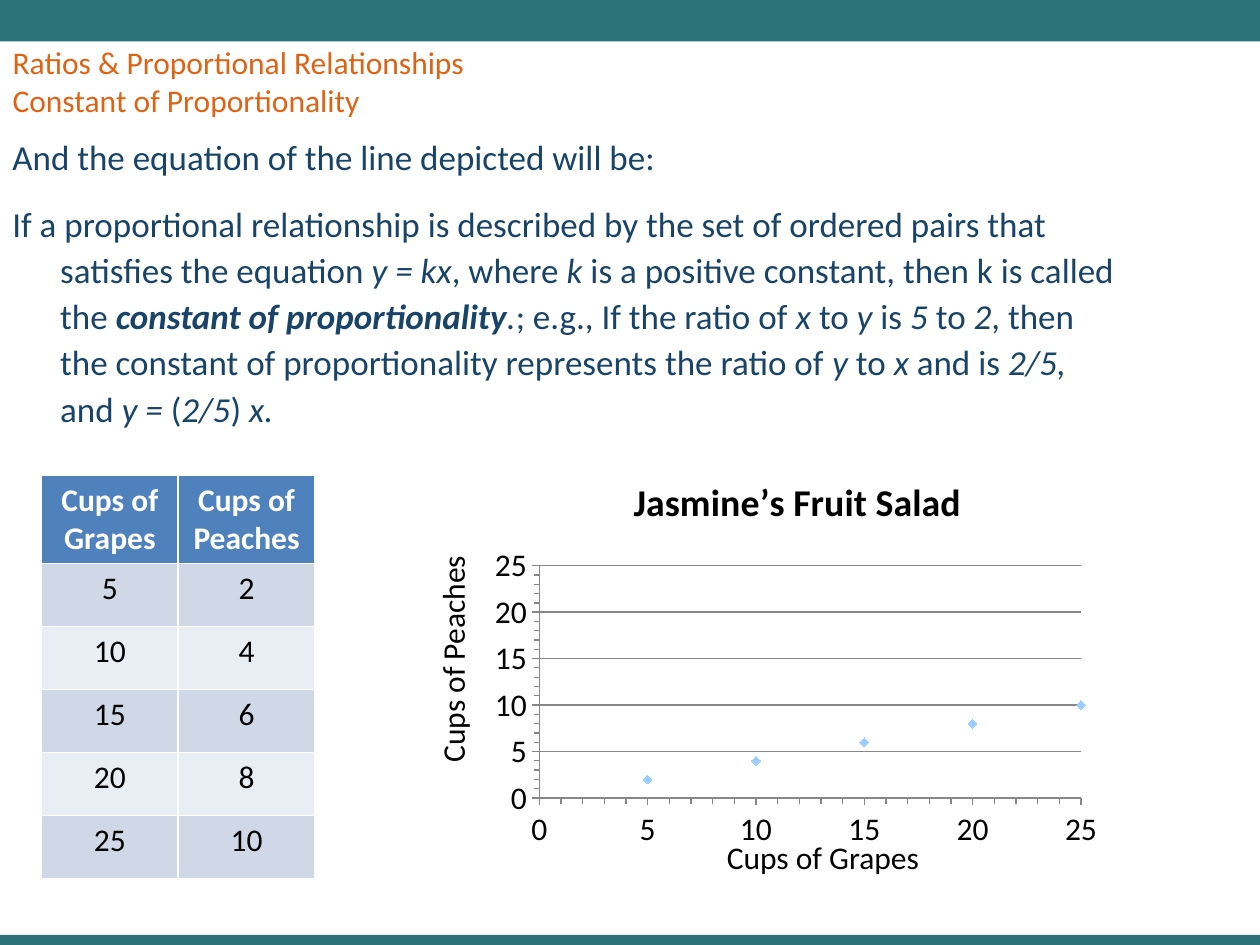
from pptx import Presentation
from pptx.chart.data import XyChartData
from pptx.dml.color import RGBColor
from pptx.enum.chart import XL_CHART_TYPE, XL_MARKER_STYLE, XL_TICK_MARK
from pptx.enum.shapes import MSO_SHAPE
from pptx.enum.text import MSO_ANCHOR, MSO_AUTO_SIZE, PP_ALIGN
from pptx.oxml import parse_xml
from pptx.oxml.ns import nsdecls
from pptx.util import Inches, Pt

RECTANGLE = MSO_SHAPE.RECTANGLE
LEFT, CENTER = PP_ALIGN.LEFT, PP_ALIGN.CENTER
TOP, BOTTOM = MSO_ANCHOR.TOP, MSO_ANCHOR.BOTTOM
NO_AUTOFIT = MSO_AUTO_SIZE.NONE
SCATTER = XL_CHART_TYPE.XY_SCATTER
DIAMOND = XL_MARKER_STYLE.DIAMOND
TICK_OUT = XL_TICK_MARK.OUTSIDE

FONT = "Calibri"
TEAL, ORANGE, NAVY = "2D7278", "DF6314", "194467"
BLACK, WHITE, GREY = "000000", "FFFFFF", "878787"
HEADER_BLUE, BAND_DARK, BAND_LIGHT = "4F81BD", "D0D8E8", "E9EDF4"
MARKER_BLUE = "99CCFF"

GRAPES = [5, 10, 15, 20, 25]
PEACHES = [2, 4, 6, 8, 10]
GRAPES_LABEL, PEACHES_LABEL = "Cups of Grapes", "Cups of Peaches"

# Asterisks enclose italics; the key term is bold as well
KEY_TERM = "constant of proportionality"
STATEMENTS = [
    "And the equation of the line depicted will be:",
    "If a proportional relationship is described by the set of ordered pairs "
    "that satisfies the equation *y = kx*, where *k* is a positive constant, "
    f"then k is called the *{KEY_TERM}**.*; e.g., If the ratio of *x *to *y *is "
    "*5 *to *2*, then the constant of proportionality represents the ratio of "
    "*y* to *x* and is *2/5, *and *y = *(*2/5*) *x.*",
]


def rgb(value):
    return RGBColor.from_string(value)


def style_font(font, size, color, bold=None):
    font.name = FONT
    font.size = Pt(size)
    font.color.rgb = rgb(color)
    font.bold = bold


def inches(box):
    return [Inches(length) for length in box]


def add_bar(slide, box):
    bar = slide.shapes.add_shape(RECTANGLE, *inches(box))
    bar.shadow.inherit = False
    bar.fill.solid()
    bar.fill.fore_color.rgb = rgb(TEAL)
    bar.line.fill.background()


def set_title(slide, box):
    title = slide.shapes.title
    title.left, title.top, title.width, title.height = inches(box)
    frame = title.text_frame
    frame.auto_size = NO_AUTOFIT
    frame.vertical_anchor = BOTTOM
    frame.text = "Ratios & Proportional Relationships\vConstant of Proportionality"
    paragraph = frame.paragraphs[0]
    paragraph.alignment = LEFT
    style_font(paragraph.font, 18, ORANGE)


def add_statements(slide, box):
    frame = slide.shapes.add_textbox(*inches(box)).text_frame
    frame.word_wrap = True
    for number, statement in enumerate(STATEMENTS):
        paragraph = frame.add_paragraph() if number else frame.paragraphs[0]
        paragraph.line_spacing = 1.1
        paragraph.space_after = Pt(12)
        # Hanging indent
        properties = paragraph._p.get_or_add_pPr()
        properties.set("marL", str(Inches(0.38)))
        properties.set("indent", str(-Inches(0.38)))
        style_font(paragraph.font, 20, NAVY)
        for position, piece in enumerate(statement.split("*")):
            if not piece:
                continue
            run = paragraph.add_run()
            run.text = piece
            if position % 2:
                run.font.italic = True
                run.font.bold = True if piece == KEY_TERM else None


def add_cups_table(slide, box):
    rows = [(GRAPES_LABEL, PEACHES_LABEL), *zip(GRAPES, PEACHES)]
    table = slide.shapes.add_table(len(rows), 2, *inches(box)).table
    for r, values in enumerate(rows):
        table.rows[r].height = Inches(0.5 if r else 0.69)
        band = BAND_DARK if r % 2 else BAND_LIGHT
        for c, value in enumerate(values):
            cell = table.cell(r, c)
            cell.fill.solid()
            cell.fill.fore_color.rgb = rgb(band if r else HEADER_BLUE)
            cell.vertical_anchor = TOP
            cell.text = str(value)
            paragraph = cell.text_frame.paragraphs[0]
            paragraph.alignment = CENTER
            style_font(paragraph.font, 18, BLACK if r else WHITE, bold=not r)


def style_axis(axis, gridlines):
    axis.minimum_scale, axis.maximum_scale = 0, 25
    axis.major_unit, axis.minor_unit = 5, 1
    axis.major_tick_mark = axis.minor_tick_mark = TICK_OUT
    axis.format.line.color.rgb = rgb(GREY)
    axis.has_major_gridlines = gridlines
    if gridlines:
        axis.major_gridlines.format.line.color.rgb = rgb(GREY)


def add_salad_chart(slide, box):
    data = XyChartData()
    series = data.add_series("Cups")
    for point in zip(GRAPES, PEACHES):
        series.add_data_point(*point)
    chart = slide.shapes.add_chart(SCATTER, *inches(box), data).chart
    style_font(chart.font, 18, BLACK)
    chart.has_legend = False
    chart.has_title = True
    chart.chart_title.text_frame.text = "Jasmine’s Fruit Salad"
    style_font(chart.chart_title.text_frame.paragraphs[0].font, 21.6, BLACK, True)
    style_axis(chart.category_axis, gridlines=False)
    style_axis(chart.value_axis, gridlines=True)

    # Markers only
    plot = chart.plots[0]
    plot.vary_by_categories = False
    salad = plot.series[0]
    salad.smooth = False
    salad.format.line.fill.background()
    salad.marker.style = DIAMOND
    salad.marker.size = 5
    salad.marker.format.fill.solid()
    salad.marker.format.fill.fore_color.rgb = rgb(MARKER_BLUE)
    salad.marker.format.line.fill.background()

    # Fixed plot area, as fractions of the chart
    area = {"x": 0.09, "y": 0.28, "w": 0.86, "h": 0.58}
    sizes = "".join(f'<c:{key} val="{value}"/>' for key, value in area.items())
    layout = parse_xml(
        f'<c:layout {nsdecls("c")}><c:manualLayout><c:layoutTarget val="inner"/>'
        f'<c:xMode val="edge"/><c:yMode val="edge"/>{sizes}'
        "</c:manualLayout></c:layout>")
    plot_area = chart._chartSpace.chart.plotArea
    for old in plot_area.findall(layout.tag):
        plot_area.remove(old)
    plot_area.insert(0, layout)


def add_axis_label(slide, box, label, vertical=False):
    frame = slide.shapes.add_textbox(*inches(box)).text_frame
    frame.word_wrap = True
    frame.text = label
    style_font(frame.paragraphs[0].font, 18, BLACK)
    if vertical:
        frame._txBody.bodyPr.set("vert", "vert270")


def main():
    presentation = Presentation()
    presentation.slide_width, presentation.slide_height = Inches(10), Inches(7.5)
    slide = presentation.slides.add_slide(presentation.slide_layouts[5])

    add_bar(slide, (0, 0, 10, 0.33))
    add_bar(slide, (0, 7.42, 10, 0.08))
    set_title(slide, (0, 0.33, 9, 0.66))
    add_statements(slide, (0, 0.99, 9, 2.6))
    add_cups_table(slide, (0.33, 3.77, 2.17, 3.21))
    add_salad_chart(slide, (3.83, 3.6, 5, 3.18))
    add_axis_label(slide, (3.39, 4.27, 0.5, 1.88), PEACHES_LABEL, vertical=True)
    add_axis_label(slide, (5.67, 6.6, 1.87, 0.4), GRAPES_LABEL)

    presentation.save("out.pptx")


if __name__ == "__main__":
    main()
